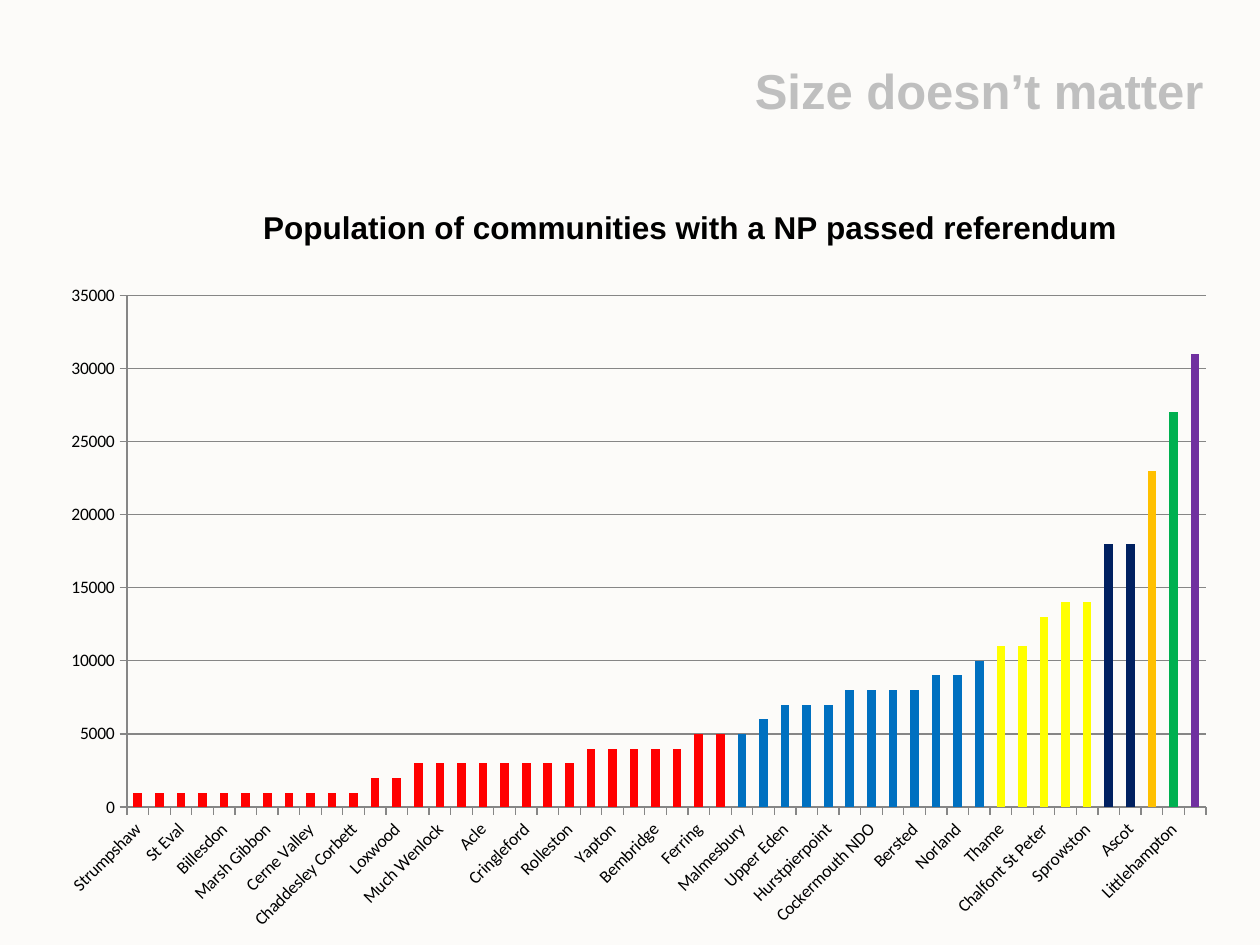
from lxml.etree import SubElement
from pptx import Presentation
from pptx.chart.data import CategoryChartData
from pptx.dml.color import RGBColor
from pptx.enum.chart import XL_CHART_TYPE, XL_TICK_MARK
from pptx.enum.text import MSO_AUTO_SIZE, PP_ALIGN
from pptx.oxml import parse_xml
from pptx.oxml.ns import nsdecls, qn
from pptx.util import Inches, Pt


# Colours, fonts and type sizes
class Theme:
    page, ink, head, grid = "FCFBF9", "000000", "BFBFBF", "868686"
    bar = "4F81BD"
    sans, text = "Arial", "Calibri"
    big, mid, small = 28, 18, 10


# Population in thousands, smallest community first
TOWNS = [
    ("Strumpshaw", 1), ("Kingston", 1), ("St Eval", 1), ("Anslow", 1),
    ("Billesdon", 1), ("Worth", 1), ("Marsh Gibbon", 1), ("Kirdford", 1),
    ("Cerne Valley", 1), ("Edith Weston", 1), ("Chaddesley Corbett", 1),
    ("Lynton & Lynmouth", 2), ("Loxwood", 2), ("Tattenhall", 3),
    ("Much Wenlock", 3), ("Woodcote", 3), ("Acle", 3), ("Exminster", 3),
    ("Cringleford", 3), ("Woburn Sands", 3), ("Rolleston", 3),
    ("Cuckfield", 4), ("Yapton", 4), ("Arundel", 4), ("Bembridge", 4),
    ("Uppingham", 4), ("Ferring", 5), ("Winslow", 5), ("Malmesbury", 5),
    ("East Preston", 6), ("Upper Eden", 7), ("Exeter St James", 7),
    ("Hurstpierpoint", 7), ("Angmering", 8), ("Cockermouth NDO", 8),
    ("Heathfield Park", 8), ("Bersted", 8), ("Broughton Astley", 9),
    ("Norland", 9), ("Felpham", 10), ("Thame", 11),
    ("Inner East Preston", 11), ("Chalfont St Peter", 13),
    ("Rustington", 14), ("Sprowston", 14), ("Madeley", 18), ("Ascot", 18),
    ("Tettenhall", 23), ("Littlehampton", 27), ("Winsford", 31),
]

# Colour of each size band and how many bars it holds
BANDS = [("FF0000", 28), ("0070C0", 12), ("FFFF00", 5), ("002060", 2),
         ("FFC000", 1), ("00B050", 1), ("7030A0", 1)]


class Deck:
    def __init__(self, theme):
        self.theme = theme
        self.prs = Presentation()
        self.prs.slide_width, self.prs.slide_height = Inches(10), Inches(7.5)
        self.slide = self.prs.slides.add_slide(self.prs.slide_layouts[6])
        self.fill(self.slide.background, theme.page)

    def fill(self, item, color):
        item.fill.solid()
        item.fill.fore_color.rgb = RGBColor.from_string(color)

    def style(self, font, name, size, color, bold=False):
        font.name, font.size, font.bold = name, Pt(size), bold
        font.color.rgb = RGBColor.from_string(color)

    def place(self, node, spot, pos):
        """Give a chart part a fixed place, in shares of the chart."""
        for old in node.findall(qn("c:layout")):
            node.remove(old)
        box = parse_xml(f"<c:layout {nsdecls('c')}><c:manualLayout/></c:layout>")
        for tag, val in spot:
            SubElement(box[0], qn(f"c:{tag}")).set("val", str(val))
        node.insert(pos, box)

    def label(self, words, x, y, w, h):
        box = self.slide.shapes.add_textbox(
            Inches(x), Inches(y), Inches(w), Inches(h))
        frame = box.text_frame
        frame.word_wrap = True
        frame.auto_size = MSO_AUTO_SIZE.SHAPE_TO_FIT_TEXT
        para = frame.paragraphs[0]
        para.alignment = PP_ALIGN.RIGHT
        run = para.add_run()
        run.text = words
        self.style(run.font, self.theme.sans, self.theme.big,
                   self.theme.head, True)

    def chart(self, title, towns, bands, x, y, w, h):
        look = self.theme
        data = CategoryChartData()
        data.categories = [name for name, _ in towns]
        data.add_series("Series 1", [size * 1000 for _, size in towns])
        chart = self.slide.shapes.add_chart(
            XL_CHART_TYPE.COLUMN_CLUSTERED, Inches(x), Inches(y),
            Inches(w), Inches(h), data).chart
        chart.has_legend = False
        self.style(chart.font, look.text, look.small, look.ink)

        # Title
        chart.has_title = True
        run = chart.chart_title.text_frame.paragraphs[0].add_run()
        run.text = title
        self.style(run.font, look.sans, look.mid, look.ink, True)
        self.place(chart.chart_title.element, [
            ("xMode", "edge"), ("yMode", "edge"), ("x", 0.18), ("y", 0.01)], 1)

        # Bars, coloured by band
        plot = chart.plots[0]
        plot.gap_width, plot.vary_by_categories = 150, False
        bars = plot.series[0]
        bars.invert_if_negative = False
        self.fill(bars.format, look.bar)
        colors = [color for color, count in bands for _ in range(count)]
        for i, color in enumerate(colors):
            self.fill(bars.points[i].format, color)

        # Axes
        cat, val = chart.category_axis, chart.value_axis
        val.minimum_scale, val.maximum_scale, val.major_unit = 0, 35000, 5000
        val.has_major_gridlines = True
        for axis in (cat, val):
            axis.major_tick_mark = XL_TICK_MARK.OUTSIDE
            axis.minor_tick_mark = XL_TICK_MARK.NONE
            self.style(axis.tick_labels.font, look.text, look.small, look.ink)
        for part in (cat, val, val.major_gridlines):
            part.format.line.width = Pt(0.75)
            part.format.line.color.rgb = RGBColor.from_string(look.grid)

        # Slanted labels, every second town
        area = chart.element.find(".//" + qn("c:plotArea"))
        node = area.find(qn("c:catAx"))
        body = node.find(qn("c:txPr")).find(qn("a:bodyPr"))
        body.set("rot", "-2700000")
        body.set("vert", "horz")
        node.find(qn("c:noMultiLvlLbl")).addprevious(
            parse_xml(f'<c:tickLblSkip {nsdecls("c")} val="2"/>'))
        self.place(area, [
            ("layoutTarget", "inner"), ("xMode", "edge"), ("yMode", "edge"),
            ("x", 0.07), ("y", 0.135), ("w", 0.91), ("h", 0.683)], 0)


def main():
    deck = Deck(Theme)
    deck.chart("Population of communities with a NP passed referendum",
               TOWNS, BANDS, 0.35, 1.54, 9.41, 5.95)
    deck.label("Size doesn’t matter", 2.23, 0.43, 7.42, 0.57)
    deck.prs.save("out.pptx")


if __name__ == "__main__":
    main()
